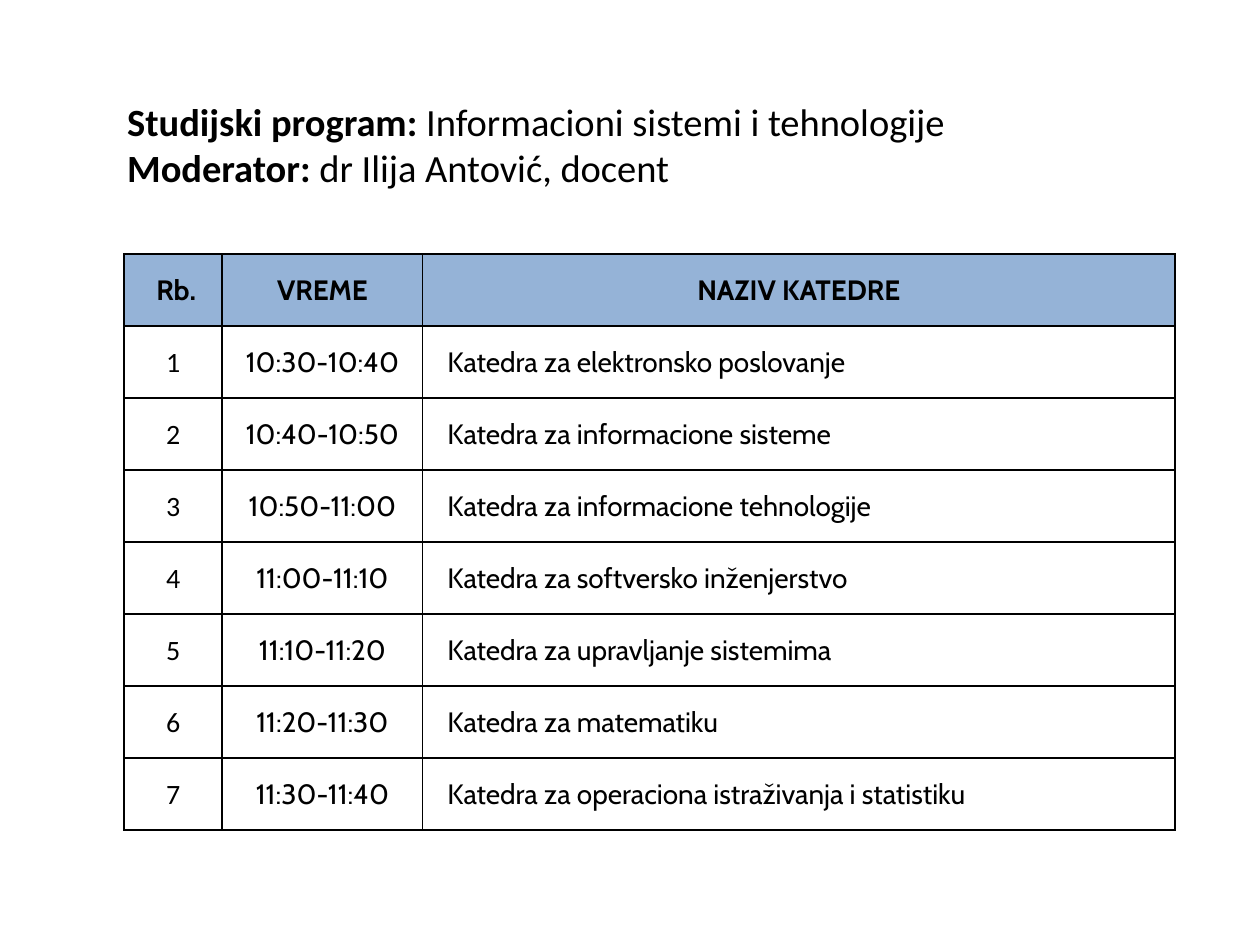
from lxml.etree import SubElement
from pptx import Presentation
from pptx.dml.color import RGBColor
from pptx.enum.text import MSO_ANCHOR, MSO_AUTO_SIZE, PP_ALIGN
from pptx.oxml.ns import qn
from pptx.util import Pt

BLACK = RGBColor(0x00, 0x00, 0x00)
HEADER_BLUE = RGBColor(0x95, 0xB3, 0xD7)

HEADING = [
    ("Studijski program: ", "Informacioni sistemi i tehnologije"),
    ("Moderator: ", "dr Ilija Antović, docent"),
]
COLUMNS = [" Rb.", "VREME", "NAZIV KATEDRE"]
SCHEDULE = [
    ("10:30-10:40", "Katedra za elektronsko poslovanje"),
    ("10:40-10:50", "Katedra za informacione sisteme"),
    ("10:50-11:00", "Katedra za informacione tehnologije"),
    ("11:00-11:10", "Katedra za softversko inženjerstvo"),
    ("11:10-11:20", "Katedra za upravljanje sistemima"),
    ("11:20-11:30", "Katedra za matematiku"),
    ("11:30-11:40", "Katedra za operaciona istraživanja i statistiku"),
]
COL_WIDTHS = [56.2, 114.5, 430]
ROW_HEIGHT = 41.14
NAME_INDENT = 13.5


def style_run(r, size, font, bold):
    r.font.size = Pt(size)
    r.font.name = font
    r.font.bold = bold
    r.font.color.rgb = BLACK


def add_borders(cell):
    tc_pr = cell._tc.get_or_add_tcPr()
    for i, side in enumerate(("lnL", "lnR", "lnT", "lnB")):
        ln = SubElement(tc_pr, qn(f"a:{side}"), w=str(Pt(1)))
        fill = SubElement(ln, qn("a:solidFill"))
        SubElement(fill, qn("a:srgbClr"), val=str(BLACK))
        tc_pr.insert(i, ln)


def fill_cell(cell, text, row, col):
    header = row == 0
    cell.margin_left = cell.margin_right = cell.margin_top = Pt(0.72)
    cell.margin_bottom = Pt(0)
    cell.vertical_anchor = MSO_ANCHOR.MIDDLE
    if header:
        cell.fill.solid()
        cell.fill.fore_color.rgb = HEADER_BLUE
    else:
        cell.fill.background()
    add_borders(cell)
    p = cell.text_frame.paragraphs[0]
    p.text = text
    if header or col < 2:
        p.alignment = PP_ALIGN.CENTER
    else:
        p.alignment = PP_ALIGN.LEFT
        p._p.get_or_add_pPr().set("marL", str(Pt(NAME_INDENT)))
    font = "Calibri" if col == 0 and not header else "Cabin"
    style_run(p.runs[0], 16, font, header)


def add_heading(s):
    sp = s.shapes.title
    sp.left, sp.top, sp.width, sp.height = Pt(65.5), Pt(37.5), Pt(647), Pt(90)
    tf = sp.text_frame
    tf.word_wrap = True
    tf.auto_size = MSO_AUTO_SIZE.NONE
    tf.vertical_anchor = MSO_ANCHOR.MIDDLE
    p = tf.paragraphs[0]
    p.alignment = PP_ALIGN.LEFT
    for i, line in enumerate(HEADING):
        if i:
            p.add_line_break()
        for text, bold in zip(line, (True, False)):
            r = p.add_run()
            r.text = text
            style_run(r, 22, "Calibri", bold)


def add_schedule(s):
    rows = [COLUMNS] + [(str(n), *item) for n, item in enumerate(SCHEDULE, 1)]
    table = s.shapes.add_table(
        len(rows), len(COLUMNS), Pt(70.8), Pt(145.2),
        Pt(sum(COL_WIDTHS)), Pt(ROW_HEIGHT * len(rows))).table
    table.horz_banding = False
    for column, width in zip(table.columns, COL_WIDTHS):
        column.width = Pt(width)
    for i, values in enumerate(rows):
        table.rows[i].height = Pt(ROW_HEIGHT)
        for j, text in enumerate(values):
            fill_cell(table.cell(i, j), text, i, j)


def main():
    prs = Presentation()
    prs.slide_width, prs.slide_height = Pt(720), Pt(540)
    s = prs.slides.add_slide(prs.slide_layouts[5])
    add_heading(s)
    add_schedule(s)
    prs.save("out.pptx")


if __name__ == "__main__":
    main()
